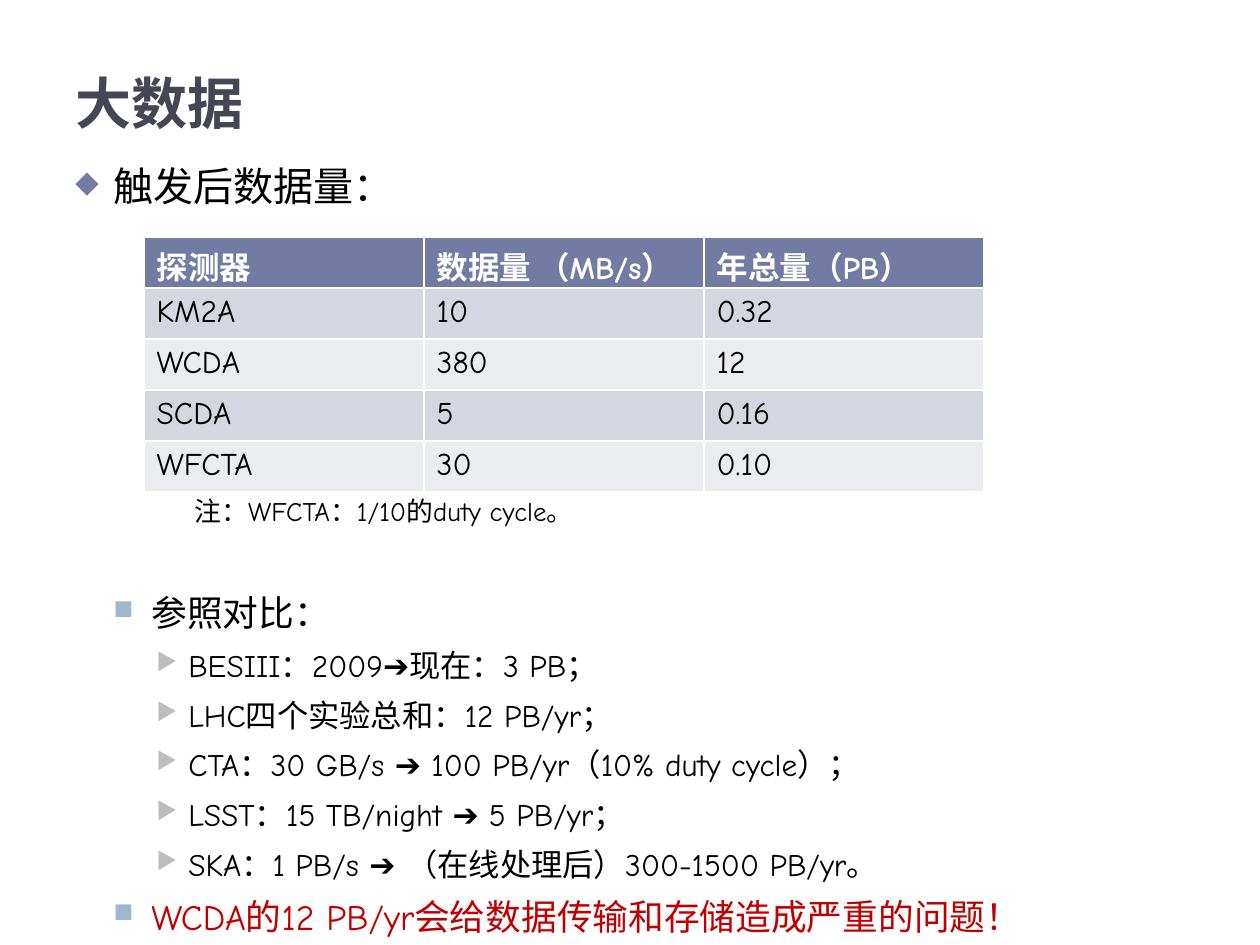
from dataclasses import dataclass

from lxml.etree import SubElement
from pptx import Presentation
from pptx.dml.color import RGBColor
from pptx.enum.text import MSO_ANCHOR, MSO_AUTO_SIZE, PP_ALIGN
from pptx.oxml.ns import qn
from pptx.util import Emu, Pt

EMU_PER_PX = 914400 / 126
FONT = "Comic Neue"
BLACK, WHITE, RED = "000000", "FFFFFF", "C00000"
HEADER_FILL = "727CA3"
BAND_FILLS = ("D5D7E0", "EBECF0")


@dataclass(frozen=True)
class Level:
    size: float
    line_height: float
    margin: int
    hanging: int = 0
    space_before: float = 5
    bullet: str = ""
    bullet_color: str = ""


@dataclass(frozen=True)
class Line:
    text: str
    level: Level
    color: str = BLACK


HEADING = Level(22.9, 27.5, 38, 38, 6, "◆", "727CA3")
NOTE = Level(15.3, 18.3, 119, space_before=161)
TOPIC = Level(20.4, 24.4, 76, 38, 35, "■", "9FB8CD")
CONCLUSION = Level(20.4, 24.4, 76, 38, 5, "■", "9FB8CD")
EXAMPLE = Level(17.9, 21.4, 113, 32, 5, "▶", "BDBDBD")

LINES = [
    Line("触发后数据量：", HEADING),
    Line("注：WFCTA：1/10的duty cycle。", NOTE),
    Line("参照对比：", TOPIC),
    Line("BESIII：2009➔现在：3 PB；", EXAMPLE),
    Line("LHC四个实验总和：12 PB/yr；", EXAMPLE),
    Line("CTA：30 GB/s ➔ 100 PB/yr（10% duty cycle）；", EXAMPLE),
    Line("LSST：15 TB/night ➔ 5 PB/yr；", EXAMPLE),
    Line("SKA：1 PB/s ➔ （在线处理后）300-1500 PB/yr。", EXAMPLE),
    Line("WCDA的12 PB/yr会给数据传输和存储造成严重的问题！", CONCLUSION, RED),
]

DATA_RATES = [
    ("探测器", "数据量 （MB/s）", "年总量（PB）"),
    ("KM2A", "10", "0.32"),
    ("WCDA", "380", "12"),
    ("SCDA", "5", "0.16"),
    ("WFCTA", "30", "0.10"),
]


def px(value: int) -> Emu:
    return Emu(round(value * EMU_PER_PX))


def rgb(color: str) -> RGBColor:
    return RGBColor.from_string(color)


def format_runs(paragraph, size: float, color: str, bold: bool = False) -> None:
    for run in paragraph.runs:
        run.font.name = FONT
        run.font.size = Pt(size)
        run.font.bold = bold
        run.font.color.rgb = rgb(color)


def set_bullet(paragraph, level: Level) -> None:
    """Indent the paragraph and give it the bullet of its level."""
    properties = paragraph._p.get_or_add_pPr()
    properties.set("marL", str(px(level.margin)))
    properties.set("indent", str(-px(level.hanging)))
    if not level.bullet:
        SubElement(properties, qn("a:buNone"))
        return
    color = SubElement(properties, qn("a:buClr"))
    SubElement(color, qn("a:srgbClr"), val=level.bullet_color)
    SubElement(properties, qn("a:buSzPct"), val="76000")
    SubElement(properties, qn("a:buChar"), char=level.bullet)


def add_title(slide, text: str) -> None:
    title = slide.shapes.title
    title.left, title.top, title.width, title.height = map(px, (63, 6, 1134, 136))
    text_frame = title.text_frame
    text_frame.text = text
    text_frame.auto_size = MSO_AUTO_SIZE.NONE
    text_frame.vertical_anchor = MSO_ANCHOR.BOTTOM
    paragraph = text_frame.paragraphs[0]
    paragraph.alignment = PP_ALIGN.LEFT
    format_runs(paragraph, 32, "464653", bold=True)


def add_outline(slide, lines: list[Line]) -> None:
    text_box = slide.shapes.add_textbox(px(63), px(155), px(1134), px(693))
    text_frame = text_box.text_frame
    text_frame.word_wrap = True
    text_frame.text = "\n".join(line.text for line in lines)
    for paragraph, line in zip(text_frame.paragraphs, lines):
        paragraph.line_spacing = Pt(line.level.line_height)
        paragraph.space_before = Pt(line.level.space_before)
        paragraph.space_after = Pt(2)
        set_bullet(paragraph, line.level)
        format_runs(paragraph, line.level.size, line.color)


def add_data_table(slide, rows: list[tuple[str, ...]]) -> None:
    """Add the table; its default style supplies the white cell borders."""
    column_count = len(rows[0])
    table = slide.shapes.add_table(
        len(rows), column_count, px(144), px(237), px(280 * column_count), px(51 * len(rows))
    ).table
    for row_index, row in enumerate(rows):
        is_header = row_index == 0
        fill = HEADER_FILL if is_header else BAND_FILLS[(row_index - 1) % 2]
        for column_index, text in enumerate(row):
            cell = table.cell(row_index, column_index)
            cell.text_frame.text = text
            cell.fill.solid()
            cell.fill.fore_color.rgb = rgb(fill)
            format_runs(
                cell.text_frame.paragraphs[0], 18, WHITE if is_header else BLACK, is_header
            )


def main() -> None:
    presentation = Presentation()
    presentation.slide_width, presentation.slide_height = px(1260), px(945)
    slide = presentation.slides.add_slide(presentation.slide_layouts[5])
    add_title(slide, "大数据")
    add_outline(slide, LINES)
    add_data_table(slide, DATA_RATES)
    presentation.save("out.pptx")


if __name__ == "__main__":
    main()
